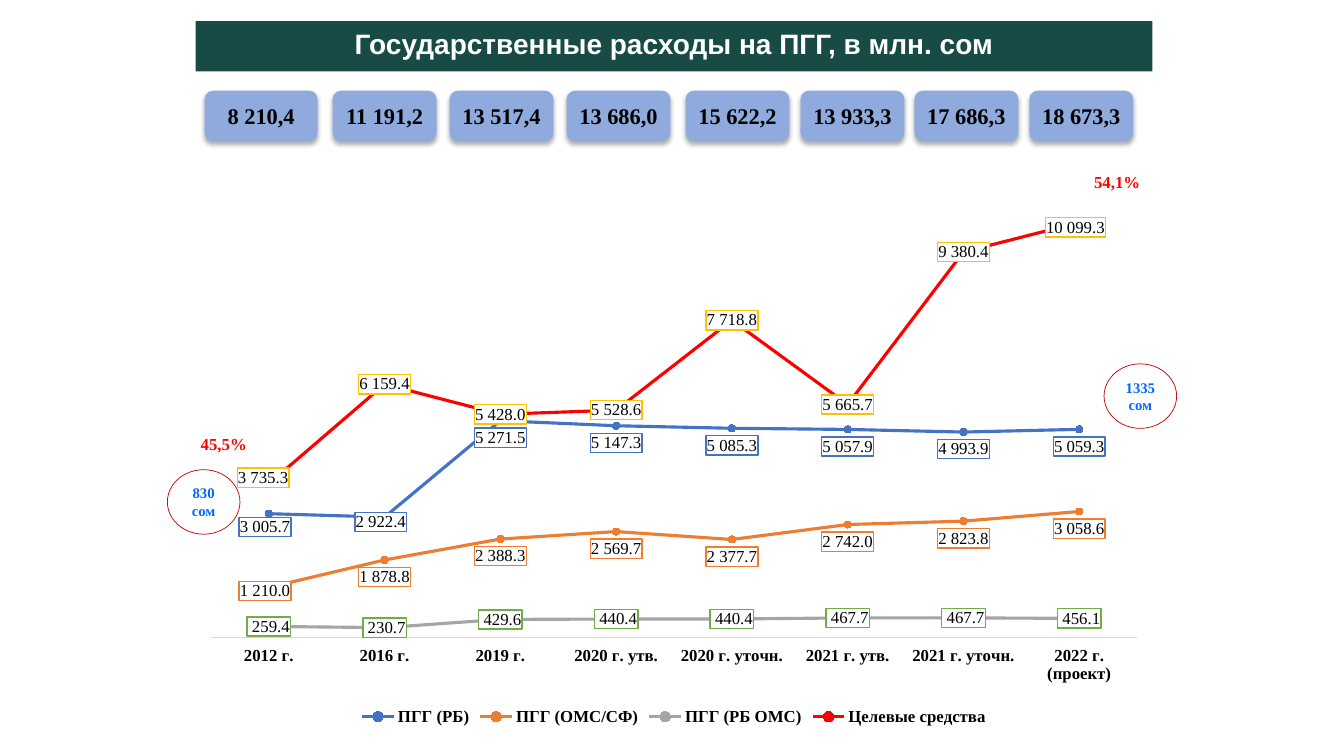
from copy import deepcopy

from lxml import etree
from pptx import Presentation
from pptx.chart.data import CategoryChartData
from pptx.dml.color import RGBColor
from pptx.enum.chart import (XL_CHART_TYPE, XL_LABEL_POSITION, XL_LEGEND_POSITION,
                             XL_MARKER_STYLE, XL_TICK_LABEL_POSITION, XL_TICK_MARK)
from pptx.enum.shapes import MSO_SHAPE
from pptx.enum.text import MSO_ANCHOR, PP_ALIGN
from pptx.oxml import parse_xml
from pptx.oxml.ns import qn
from pptx.util import Inches, Pt

BELOW, CENTER = XL_LABEL_POSITION.BELOW, XL_LABEL_POSITION.CENTER
RECTANGLE, ROUNDED, OVAL = MSO_SHAPE.RECTANGLE, MSO_SHAPE.ROUNDED_RECTANGLE, MSO_SHAPE.OVAL
TOP, MIDDLE = MSO_ANCHOR.TOP, MSO_ANCHOR.MIDDLE
SERIF = "Times New Roman"
NUMBER_FORMAT = r"#\ ##0.0"
CHART_NS = "http://schemas.openxmlformats.org/drawingml/2006/chart"
DRAWING_NS = "http://schemas.openxmlformats.org/drawingml/2006/main"

TITLE = "Государственные расходы на ПГГ, в млн. сом"
TITLE_BOX = (1.94, 0.21, 9.49, 0.5)
CHART_BOX = (1.94, 1.16, 9.49, 6.08)
PLOT_SHARE = {"x": 0.016, "y": 0.045, "w": 0.968, "h": 0.804}
TOTAL_TOP, TOTAL_HEIGHT = 0.9, 0.5
TOTALS = [
    ("8 210,4", 2.03, 1.12), ("11 191,2", 3.3, 1.03),
    ("13 517,4", 4.46, 1.03), ("13 686,0", 5.62, 1.03),
    ("15 622,2", 6.8, 1.03), ("13 933,3", 7.94, 1.03),
    ("17 686,3", 9.07, 1.03), ("18 673,3", 10.21, 1.03),
]
SHARES = [("45,5%", (1.85, 4.25, 0.74, 0.3)), ("54,1%", (10.72, 1.65, 0.72, 0.3))]
PER_PERSON = [("830\nсом", (1.66, 4.66, 0.72, 0.64)), ("1335\nсом", (10.95, 3.61, 0.72, 0.64))]
PERIODS = ["2012 г.", "2016 г.", "2019 г.", "2020 г. утв.", "2020 г. уточн.",
           "2021 г. утв.", "2021 г. уточн.", "2022 г. (проект)"]
SERIES = [
    {"name": "ПГГ (РБ)", "color": "4472C4", "marker": "4472C4", "border": "4472C4",
     "position": BELOW, "shifts": {0: (-0.004, -0.006), 1: (-0.004, -0.02)},
     "values": [3005.7, 2922.4, 5271.5, 5147.3, 5085.3, 5057.9, 4993.9, 5059.3]},
    {"name": "ПГГ (ОМС/СФ)", "color": "ED7D31", "marker": "ED7D31", "border": "ED7D31",
     "position": BELOW, "shifts": {0: (-0.004, -0.022)},
     "values": [1210, 1878.8, 2388.3, 2569.7, 2377.7, 2742, 2823.8, 3058.6]},
    {"name": "ПГГ (РБ ОМС)", "color": "A5A5A5", "marker": "A5A5A5", "border": "70AD47",
     "position": CENTER, "shifts": {},
     "values": [259.4, 230.7, 429.6, 440.4, 440.4, 467.7, 467.7, 456.1]},
    {"name": "Целевые средства", "color": "FF0000", "marker": "FFC000", "border": "FFC000",
     "position": CENTER, "shifts": {0: (-0.006, -0.01), 7: (-0.004, 0.008)},
     "values": [3735.3, 6159.4, 5428, 5528.6, 7718.8, 5665.7, 9380.4, 10099.3]},
]


def rgb(value):
    return RGBColor.from_string(value)


def set_font(font, size, color, bold=False, name=SERIF):
    font.size, font.bold, font.name = Pt(size), bold, name
    font.color.rgb = rgb(color)


def write_text(shape, text, size, color, anchor=MIDDLE, name=SERIF):
    frame = shape.text_frame
    frame.text = text
    frame.word_wrap = True
    frame.vertical_anchor = anchor
    frame.margin_left = frame.margin_right = 0
    for paragraph in frame.paragraphs:
        paragraph.alignment = PP_ALIGN.CENTER
        for run in paragraph.runs:
            set_font(run.font, size, color, True, name)


def add_box(slide, kind, box, fill, line=None):
    shape = slide.shapes.add_shape(kind, *map(Inches, box))
    shape.shadow.inherit = False
    shape.fill.solid()
    shape.fill.fore_color.rgb = rgb(fill)
    if line:
        shape.line.color.rgb = rgb(line)
        shape.line.width = Pt(0.5)
    else:
        shape.line.fill.background()
    return shape


def add_shadow(shape):
    effects = shape._element.spPr.find(qn("a:effectLst"))
    shadow = etree.SubElement(effects, qn("a:outerShdw"), blurRad=str(Pt(3.5)),
                              dist=str(Pt(2.2)), dir="5400000", rotWithShape="0")
    color = etree.SubElement(shadow, qn("a:srgbClr"), val="000000")
    etree.SubElement(color, qn("a:alpha"), val="32000")


def manual_layout(values, inner=False):
    target = '<c:layoutTarget val="inner"/>' if inner else ""
    modes = '<c:xMode val="edge"/><c:yMode val="edge"/>' if inner else ""
    sizes = "".join(f'<c:{key} val="{value}"/>' for key, value in values.items())
    return parse_xml(f'<c:layout xmlns:c="{CHART_NS}"><c:manualLayout>{target}{modes}{sizes}'
                     '</c:manualLayout></c:layout>')


def style_labels(series, settings):
    labels = series.data_labels
    labels.show_value = True
    labels.number_format, labels.number_format_is_linked = NUMBER_FORMAT, False
    labels.position = settings["position"]
    set_font(labels.font, 12, "000000")
    element = labels._element
    border = parse_xml(
        f'<c:spPr xmlns:c="{CHART_NS}" xmlns:a="{DRAWING_NS}">'
        '<a:solidFill><a:srgbClr val="FFFFFF"/></a:solidFill>'
        f'<a:ln w="{Pt(1)}"><a:solidFill><a:srgbClr val="{settings["border"]}"/></a:solidFill></a:ln>'
        '</c:spPr>')
    element.find(qn("c:txPr")).addprevious(border)
    for leader in element.findall(qn("c:showLeaderLines")):
        element.remove(leader)
    shared = list(element)
    for order, (index, (x, y)) in enumerate(settings["shifts"].items()):
        label = etree.Element(qn("c:dLbl"))
        etree.SubElement(label, qn("c:idx"), val=str(index))
        label.append(manual_layout({"x": x, "y": y}))
        label.extend(deepcopy(part) for part in shared)
        element.insert(order, label)


def add_spending_chart(slide):
    data = CategoryChartData(number_format=NUMBER_FORMAT)
    data.categories = PERIODS
    for settings in SERIES:
        data.add_series(settings["name"], settings["values"])
    chart = slide.shapes.add_chart(XL_CHART_TYPE.LINE_MARKERS, *map(Inches, CHART_BOX), data).chart
    set_font(chart.font, 12, "000000")
    chart.has_title = False
    chart.has_legend = True
    chart.legend.position = XL_LEGEND_POSITION.BOTTOM
    chart.legend.include_in_layout = False
    set_font(chart.legend.font, 12, "000000", True)

    periods, amounts = chart.category_axis, chart.value_axis
    periods.major_tick_mark = XL_TICK_MARK.NONE
    periods.tick_label_position = XL_TICK_LABEL_POSITION.LOW
    periods.format.line.color.rgb = rgb("D9D9D9")
    periods.format.line.width = Pt(0.75)
    set_font(periods.tick_labels.font, 12, "000000", True)
    amounts.minimum_scale, amounts.maximum_scale = 0, 12000
    amounts.has_major_gridlines = False
    amounts.visible = False

    plot = chart.plots[0]
    plot.vary_by_categories = False
    for series, settings in zip(plot.series, SERIES):
        series.smooth = False
        series.format.line.color.rgb = rgb(settings["color"])
        series.format.line.width = Pt(2.25)
        series.marker.style = XL_MARKER_STYLE.CIRCLE
        series.marker.size = 5
        series.marker.format.fill.solid()
        series.marker.format.fill.fore_color.rgb = rgb(settings["marker"])
        series.marker.format.line.color.rgb = rgb(settings["marker"])
        style_labels(series, settings)

    area = chart._chartSpace.chart.plotArea
    for layout in area.findall(qn("c:layout")):
        area.remove(layout)
    area.insert(0, manual_layout(PLOT_SHARE, inner=True))


def main():
    presentation = Presentation()
    presentation.slide_width, presentation.slide_height = Inches(13.33), Inches(7.5)
    slide = presentation.slides.add_slide(presentation.slide_layouts[6])
    add_spending_chart(slide)
    for text, left, width in TOTALS:
        total = add_box(slide, ROUNDED, (left, TOTAL_TOP, width, TOTAL_HEIGHT), "8FAADC")
        add_shadow(total)
        write_text(total, text, 16, "000000")
    for text, box in SHARES:
        write_text(slide.shapes.add_textbox(*map(Inches, box)), text, 12, "FF0000", TOP)
    title = add_box(slide, RECTANGLE, TITLE_BOX, "194B46")
    write_text(title, TITLE, 20, "FFFFFF", TOP, "Arial")
    title.text_frame.paragraphs[0].space_before = Pt(12)
    title.text_frame.paragraphs[0].space_after = Pt(12)
    for text, box in PER_PERSON:
        write_text(add_box(slide, OVAL, box, "FFFFFF", "C00000"), text, 10.5, "0066FF")
    presentation.save("out.pptx")


if __name__ == "__main__":
    main()
